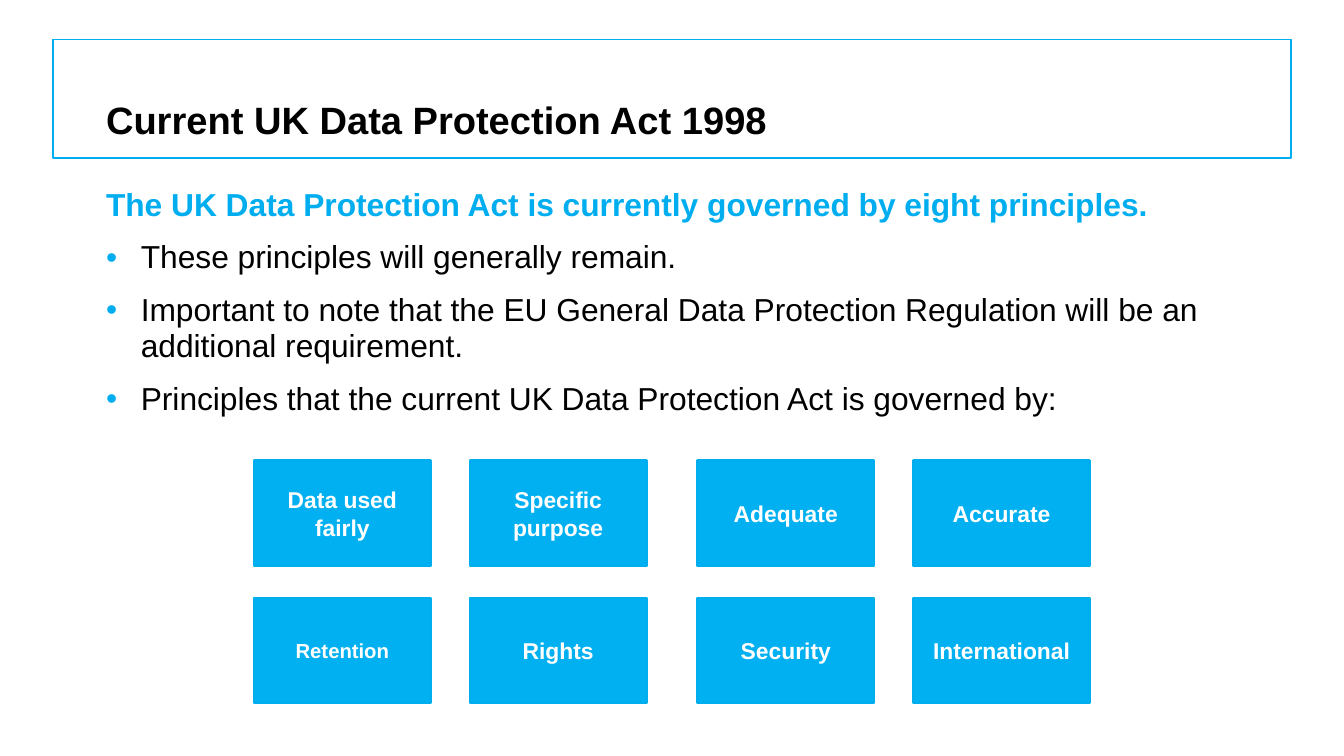
from pptx import Presentation
from pptx.dml.color import RGBColor
from pptx.enum.shapes import MSO_SHAPE
from pptx.enum.text import MSO_ANCHOR, PP_ALIGN
from pptx.oxml import parse_xml
from pptx.oxml.ns import nsdecls
from pptx.util import Inches, Pt

# Content
TITLE = "Current UK Data Protection Act 1998"
LEAD = "The UK Data Protection Act is currently governed by eight principles."
POINTS = [
    "These principles will generally remain.",
    "Important to note that the EU General Data Protection Regulation will be an additional requirement.",
    "Principles that the current UK Data Protection Act is governed by:",
]
RULES = [
    ["Data used fairly", "Specific purpose", "Adequate", "Accurate"],
    ["Retention", "Rights", "Security", "International"],
]
SMALL = {"Retention": 16}
BLUE, FILL, BLACK, WHITE = "00AEEF", "00B0F0", "000000", "FFFFFF"

# Layout in inches
WIDE, HIGH = 14.7, 8.27
LEFT, INDENT = 1.16, 0.38
GRID_X, GRID_Y = 2.78, 5.04
CARD_W, CARD_H = 1.93, 1.15
STEP_X, STEP_Y, AISLE = 2.36, 1.5, 0.13

deck = Presentation()
deck.slide_width, deck.slide_height = Inches(WIDE), Inches(HIGH)
slide = deck.slides.add_slide(deck.slide_layouts[6])


def color(code):
    return RGBColor.from_string(code)


def style(para, size, code, bold):
    font = para.font
    font.name, font.size, font.bold = "Arial", Pt(size), bold
    font.color.rgb = color(code)


def add_rect(x, y, w, h, fill, weight):
    rect = slide.shapes.add_shape(MSO_SHAPE.RECTANGLE, *map(Inches, (x, y, w, h)))
    rect.shadow.inherit = False
    if fill:
        rect.fill.solid()
        rect.fill.fore_color.rgb = color(fill)
    else:
        rect.fill.background()
    rect.line.color.rgb = color(BLUE)
    rect.line.width = Pt(weight)
    return rect


def add_text(x, y, w, h, anchor):
    frame = slide.shapes.add_textbox(*map(Inches, (x, y, w, h))).text_frame
    frame.word_wrap = True
    frame.vertical_anchor = anchor
    frame.margin_left = frame.margin_right = 0
    frame.margin_top = frame.margin_bottom = 0
    return frame


def add_bullet(para):
    props = para._p.get_or_add_pPr()
    props.set("marL", str(Inches(INDENT)))
    props.set("indent", str(-Inches(INDENT)))
    ns = nsdecls("a")
    props.append(parse_xml(f'<a:buClr {ns}><a:srgbClr val="{BLUE}"/></a:buClr>'))
    props.append(parse_xml(f'<a:buFont {ns} typeface="Arial"/>'))
    props.append(parse_xml(f'<a:buChar {ns} char="•"/>'))


# Title in its frame
add_rect(0.58, 0.43, 13.54, 1.3, None, 1)
head = add_text(LEFT, 0.43, 10.47, 1.13, MSO_ANCHOR.BOTTOM).paragraphs[0]
head.text = TITLE
style(head, 30, BLACK, True)

# Lead line and bullets
body = add_text(LEFT, 2.05, 12.38, 2.7, MSO_ANCHOR.TOP)
lead = body.paragraphs[0]
lead.text = LEAD
lead.line_spacing = 0.95
style(lead, 25, BLUE, True)
for point in POINTS:
    para = body.add_paragraph()
    para.text = point
    add_bullet(para)
    para.line_spacing = 0.95
    para.space_before = Pt(13)
    style(para, 25, BLACK, False)

# Eight principles, with an aisle between the two halves
for row, names in enumerate(RULES):
    for col, name in enumerate(names):
        x = GRID_X + col * STEP_X + col // 2 * AISLE
        card = add_rect(x, GRID_Y + row * STEP_Y, CARD_W, CARD_H, FILL, 2)
        frame = card.text_frame
        frame.word_wrap = True
        frame.vertical_anchor = MSO_ANCHOR.MIDDLE
        para = frame.paragraphs[0]
        para.text = name
        para.alignment = PP_ALIGN.CENTER
        style(para, SMALL.get(name, 18), WHITE, True)

deck.save("out.pptx")
